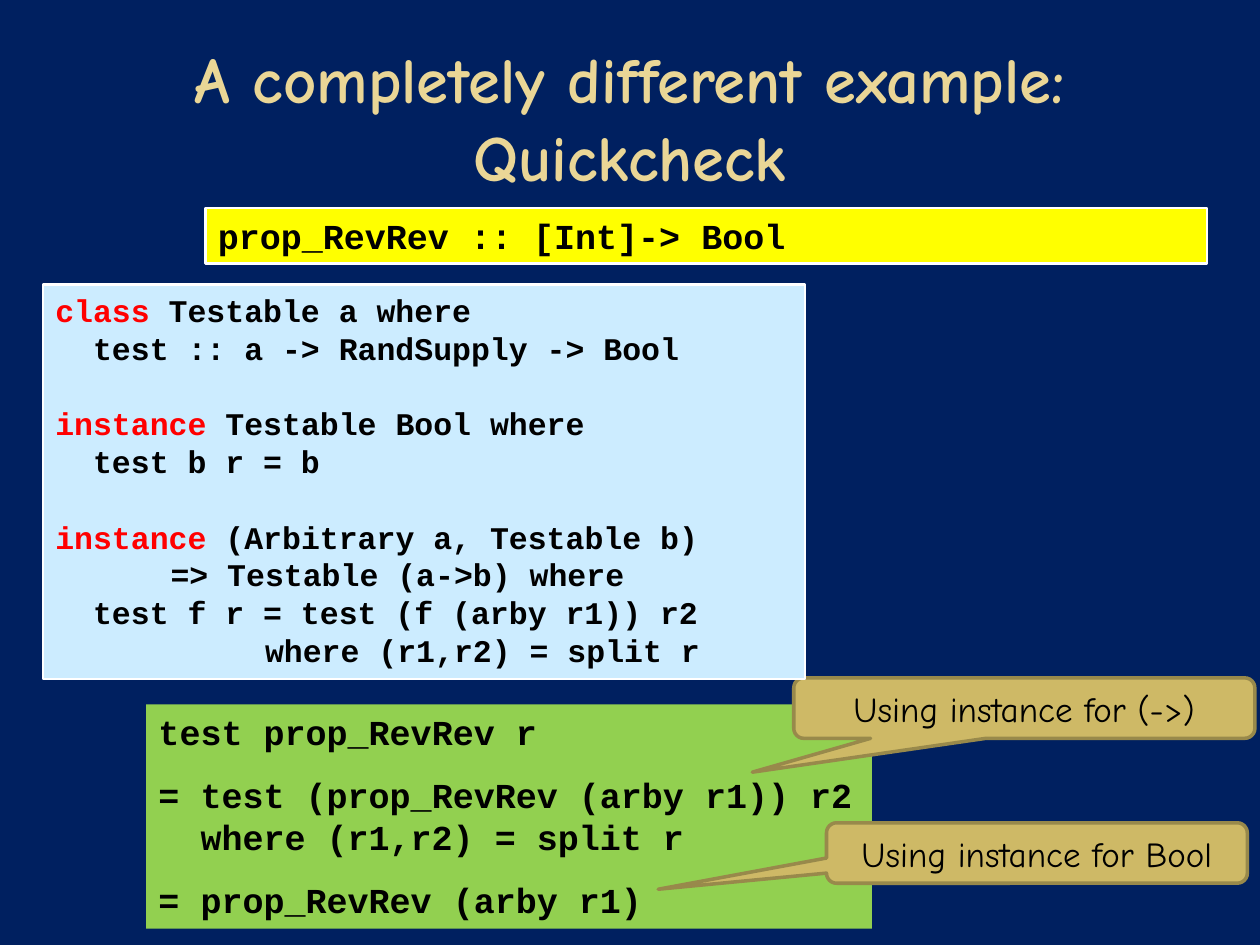
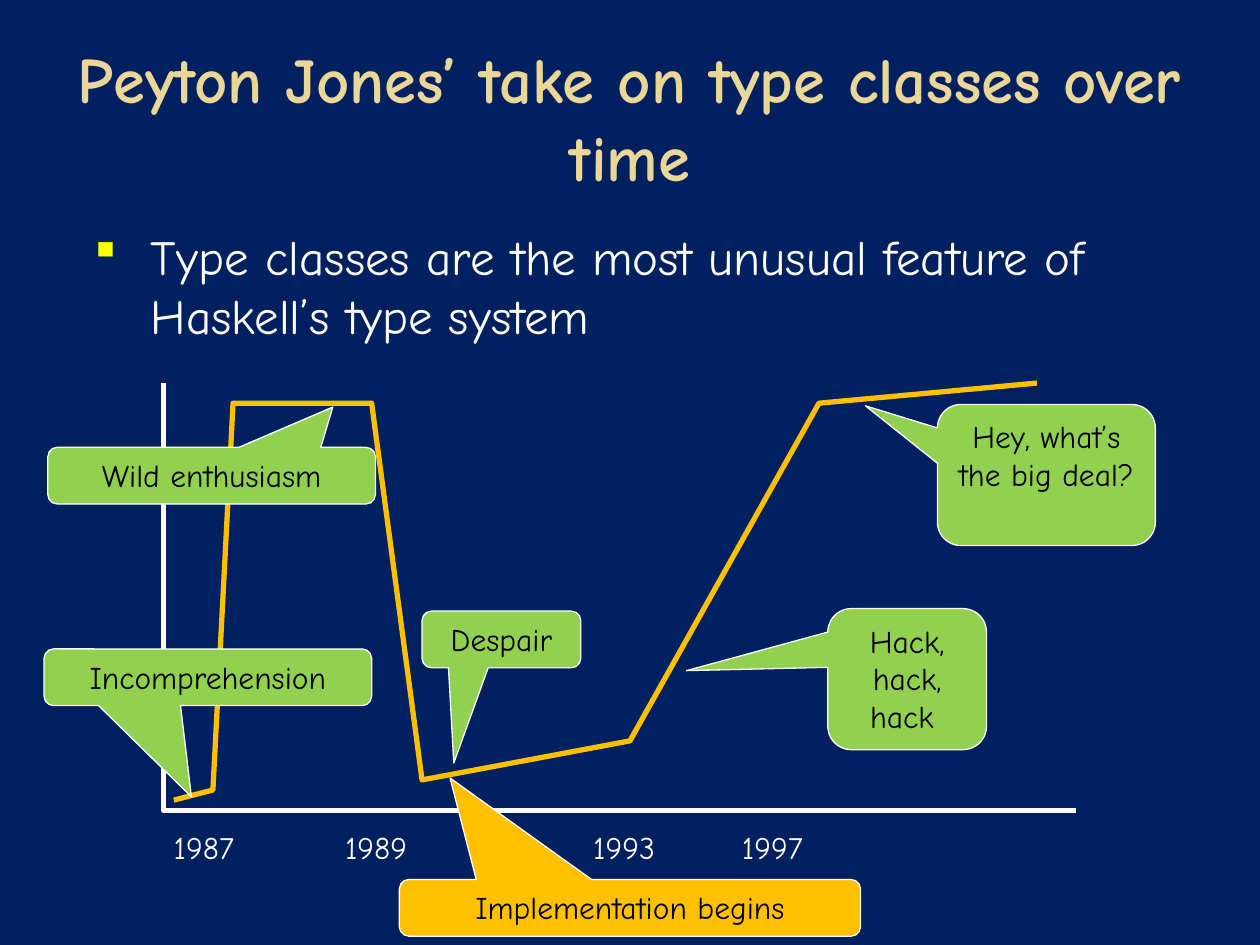
from lxml.etree import SubElement
from pptx import Presentation
from pptx.dml.color import RGBColor
from pptx.enum.shapes import MSO_SHAPE
from pptx.enum.text import MSO_ANCHOR, PP_ALIGN
from pptx.oxml.ns import qn
from pptx.util import Inches, Pt

COLORS = {
    "navy": "002060",
    "sand": "EAD696",
    "green": "92D050",
    "yellow": "FFFF00",
    "sky": "CCECFF",
    "gold": "CEB966",
    "bronze": "98894B",
    "amber": "FFC000",
    "red": "FF0000",
    "white": "FFFFFF",
    "black": "000000",
}
BODY_FONT = "Comic Neue"
CODE_FONT = "Courier New"
CELL = 0.1
COLUMNS, ROWS = 100, 75
TITLE_ONLY = 5
CHARACTER_WIDTH = 0.6
CODE_LINE = 1.2


def color(name):
    return RGBColor.from_string(COLORS[name])


def cells(*counts):
    return [Inches(count * CELL) for count in counts]


class Deck:
    def __init__(self):
        self.presentation = Presentation()
        self.presentation.slide_width, self.presentation.slide_height = cells(COLUMNS, ROWS)
        self.slide = None

    def add_slide(self, heading):
        layout = self.presentation.slide_layouts[TITLE_ONLY]
        self.slide = self.presentation.slides.add_slide(layout)
        background = self.slide.background.fill
        background.solid()
        background.fore_color.rgb = color("navy")
        title = self.slide.shapes.title
        title.left, title.top, title.width, title.height = cells(5, 3, 90, 12.5)
        frame = title.text_frame
        frame.text = heading
        frame.word_wrap = True
        frame.vertical_anchor = MSO_ANCHOR.MIDDLE
        paragraph = frame.paragraphs[0]
        paragraph.alignment = PP_ALIGN.CENTER
        self.style_runs(paragraph, 36.9, "sand", bold=True)

    def style_runs(self, paragraph, size, ink, font=BODY_FONT, bold=False):
        for run in paragraph.runs:
            run.font.size = Pt(size)
            run.font.name = font
            run.font.bold = bold
            run.font.color.rgb = color(ink)

    def paint(self, shape, fill=None, line=None, width=0.75):
        shape.shadow.inherit = False
        if fill:
            shape.fill.solid()
            shape.fill.fore_color.rgb = color(fill)
        else:
            shape.fill.background()
        if line:
            shape.line.color.rgb = color(line)
            shape.line.width = Pt(width)
        else:
            shape.line.fill.background()

    def code(self, place, lines, fill, size, line=None):
        panel = self.slide.shapes.add_shape(MSO_SHAPE.RECTANGLE, *cells(*place))
        self.paint(panel, fill, line, 1.5)
        frame = panel.text_frame
        frame.word_wrap = True
        frame.vertical_anchor = MSO_ANCHOR.TOP
        frame.text = "\n".join(keyword or rest for _, _, keyword, rest in lines)
        for paragraph, (gap, indent, keyword, rest) in zip(frame.paragraphs, lines):
            if keyword:
                paragraph.add_run().text = rest
            paragraph.alignment = PP_ALIGN.LEFT
            paragraph.space_before = Pt(gap)
            self.style_runs(paragraph, size, "black", CODE_FONT, bold=True)
            if keyword:
                paragraph.runs[0].font.color.rgb = color("red")
            margin = Pt(indent * CHARACTER_WIDTH * size)
            paragraph._p.get_or_add_pPr().set("marL", str(margin))

    def callout(self, place, pointer, text, fill, size=18, line="white", width=0.75,
                anchor=MSO_ANCHOR.TOP):
        bubble = self.slide.shapes.add_shape(
            MSO_SHAPE.ROUNDED_RECTANGULAR_CALLOUT, *cells(*place))
        for index, offset in enumerate(pointer):
            bubble.adjustments[index] = offset
        self.paint(bubble, fill, line, width)
        frame = bubble.text_frame
        frame.text = text
        frame.word_wrap = True
        frame.vertical_anchor = anchor
        paragraph = frame.paragraphs[0]
        paragraph.alignment = PP_ALIGN.CENTER
        self.style_runs(paragraph, size, "black")

    def label(self, place, text, size=18, wrap=False):
        box = self.slide.shapes.add_textbox(*cells(*place))
        box.text_frame.text = text
        box.text_frame.word_wrap = wrap
        paragraph = box.text_frame.paragraphs[0]
        self.style_runs(paragraph, size, "white")
        return paragraph

    def bullet(self, place, text):
        paragraph = self.label(place, text, 28, wrap=True)
        paragraph.space_before = Pt(18)
        properties = paragraph._p.get_or_add_pPr()
        properties.set("marL", str(Inches(0.6)))
        properties.set("indent", str(Inches(-0.45)))
        tint = SubElement(properties, qn("a:buClr"))
        SubElement(tint, qn("a:srgbClr"), val=COLORS["yellow"])
        SubElement(properties, qn("a:buFont"), typeface="Wingdings")
        SubElement(properties, qn("a:buChar"), char="§")

    def polyline(self, points, line):
        start, *rest = [cells(*point) for point in points]
        builder = self.slide.shapes.build_freeform(*start)
        builder.add_line_segments(rest, close=False)
        self.paint(builder.convert_to_shape(), line=line, width=3)


def add_quickcheck(deck):
    deck.add_slide("A completely different example:\vQuickcheck")
    deck.code((11.6, 55.9, 57.6, 17.8), [
        (12, 0, "", "test prop_RevRev r"),
        (12, 0, "", "= test (prop_RevRev (arby r1)) r2"),
        (0, 2, "", "where (r1,r2) = split r"),
        (12, 0, "", "= prop_RevRev (arby r1)"),
    ], "green", 20)
    deck.code((16.3, 16.5, 79.5, 4.4), [(0, 0, "", "prop_RevRev :: [Int]-> Bool")],
              "yellow", 20, "white")
    for place, pointer, instance in [
        ((63, 53.8, 36.6, 4.8), (-0.59, 1.06), "(->)"),
        ((65.6, 65.3, 33.4, 4.8), (-0.9, 0.6), "Bool"),
    ]:
        deck.callout(place, pointer, f"Using instance for {instance}", "gold", 20,
                     "bronze", 2, MSO_ANCHOR.MIDDLE)
    size = 18
    gap = size * CODE_LINE
    deck.code((3.4, 22.6, 60.5, 31.3), [
        (0, 0, "class ", "Testable a where"),
        (0, 2, "", "test :: a -> RandSupply -> Bool"),
        (gap, 0, "instance ", "Testable Bool where"),
        (0, 2, "", "test b r = b"),
        (gap, 0, "instance ", "(Arbitrary a, Testable b)"),
        (0, 6.1, "", "=> Testable (a->b) where"),
        (0, 2, "", "test f r = test (f (arby r1)) r2"),
        (0, 11.1, "", "where (r1,r2) = split r"),
    ], "sky", size, "white")


def add_type_class_history(deck):
    deck.add_slide("Peyton Jones’ take on type classes over time")
    deck.bullet((5, 17.5, 90, 51.5),
                "Type classes are the most unusual feature of Haskell’s type system")
    axes = [(13, 30.4), (13, 64.3), (85.4, 64.3)]
    mood = [(13.8, 63.5), (16.9, 62.7), (18.5, 32), (29.5, 32),
            (33.5, 61.9), (50, 58.8), (65, 32), (82.3, 30.4)]
    deck.polyline(axes, "white")
    deck.polyline(mood, "amber")
    for year, column in [(1987, 12.8), (1989, 26.4), (1993, 46.1), (1997, 57.9)]:
        deck.label((column, 65.2, 7.3, 4), str(year))
    for place, pointer, remark, fill in [
        ((31.7, 69.8, 36.6, 4.5), (-0.39, -2.29), "Implementation begins", "amber"),
        ((33.5, 48.5, 12.6, 4.5), (-0.3, 2.18), "Despair", "green"),
        ((65.7, 48.3, 12.6, 11.2), (-1.39, -0.06), "Hack, hack, hack ", "green"),
        ((74.4, 32.1, 17.3, 11.2), (-0.83, -0.49), "Hey, what’s the big deal?", "green"),
        ((3.5, 51.5, 26, 4.5), (-0.05, 2.11), "Incomprehension", "green"),
        ((3.8, 35.5, 26, 4.5), (0.37, -1.21), "Wild enthusiasm", "green"),
    ]:
        deck.callout(place, pointer, remark, fill)


def main():
    deck = Deck()
    add_quickcheck(deck)
    add_type_class_history(deck)
    deck.presentation.save("out.pptx")


if __name__ == "__main__":
    main()
